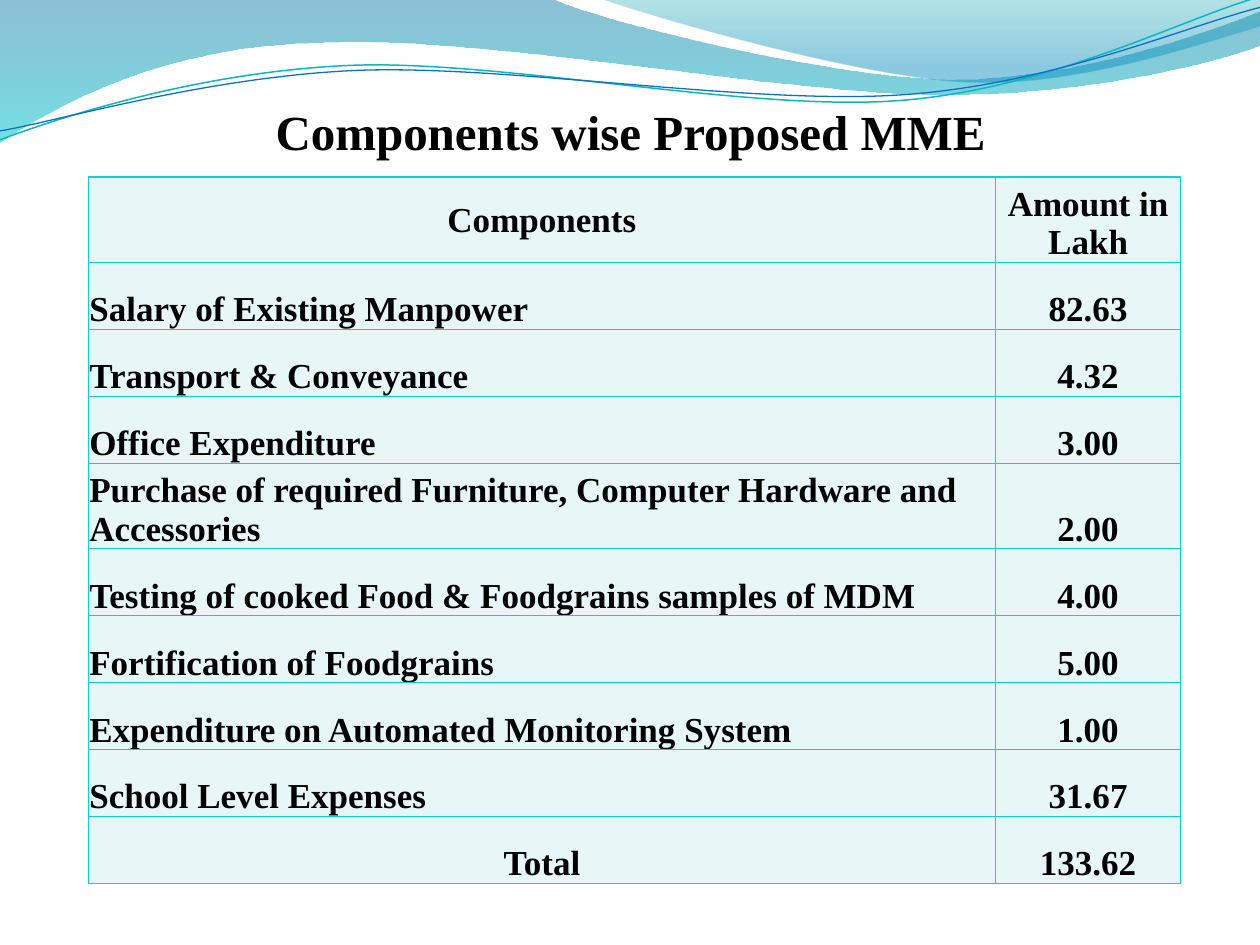
from lxml import etree
from pptx import Presentation
from pptx.dml.color import RGBColor
from pptx.enum.text import MSO_ANCHOR, PP_ALIGN
from pptx.oxml.ns import qn
from pptx.util import Cm, Pt

CENTER, LEFT = PP_ALIGN.CENTER, PP_ALIGN.LEFT
MIDDLE, BOTTOM = MSO_ANCHOR.MIDDLE, MSO_ANCHOR.BOTTOM

BLACK = RGBColor(0x00, 0x00, 0x00)
CELL_FILL = RGBColor(0xE7, 0xF7, 0xF8)
BORDER = RGBColor(0x0B, 0xD0, 0xD9)
DEEP_BLUE = RGBColor(0x00, 0x74, 0xA1)
AQUA = RGBColor(0x00, 0xC6, 0xCF)
TEAL = RGBColor(0x00, 0xA1, 0xA9)
SKY = RGBColor(0x00, 0x8B, 0xBF)
TEAL_LINE = RGBColor(0x0A, 0xB8, 0xBF)
BLUE_LINE = RGBColor(0x0F, 0x6F, 0xC6)

FONT = "Times New Roman"

# Outlines in cm: one point is a straight step, three points are a Bézier curve.
WIDE_WAVE = [
    [(0, 0)], [(11.18, 0)],
    [(12.09, 0.43), (16.87, 1.6), (19.25, 1.6)],
    [(21.67, 1.6), (24.33, 0.66), (25.4, 0.23)],
    [(25.4, 0.91)],
    [(24.97, 1.12), (22.1, 1.93), (18.95, 1.91)],
    [(15.8, 1.91), (9.7, 0.71), (6.53, 0.86)],
    [(3.28, 0.91), (1.17, 2.11), (0, 2.87)],
]
RIGHT_WAVE = [
    [(12.17, 0)],
    [(12.93, 0.28), (17.32, 1.57), (19.53, 1.65)],
    [(21.74, 1.75), (24.41, 0.81), (25.4, 0.53)],
    [(25.4, 0)],
]
TEAL_CURVE = [
    [(0, 2.82)],
    [(1.22, 2.36), (4.01, 1.45), (7.04, 1.32)],
    [(10.03, 1.19), (15.06, 2.26), (18.11, 2.03)],
    [(21.16, 1.8), (23.83, 0.38), (25.35, -0.05)],
]
BLUE_CURVE = [
    [(0, 2.64)],
    [(1.19, 2.44), (4.17, 1.55), (7.19, 1.42)],
    [(10.24, 1.3), (15.16, 2.13), (18.21, 1.91)],
    [(21.23, 1.7), (23.9, 0.53), (25.4, 0.15)],
]

HEADER = ("Components", "Amount in Lakh")
COMPONENTS = [
    ("Salary of Existing Manpower", "82.63"),
    ("Transport & Conveyance", "4.32"),
    ("Office Expenditure", "3.00"),
    ("Purchase of required Furniture, Computer Hardware and Accessories", "2.00"),
    ("Testing of cooked Food & Foodgrains samples of MDM", "4.00"),
    ("Fortification of Foodgrains", "5.00"),
    ("Expenditure on Automated Monitoring System", "1.00"),
    ("School Level Expenses", "31.67"),
]
TOTAL = ("Total", "133.62")
TWO_LINE_ROWS = (0, 4)


def set_attributes(target, values):
    for name, value in values.items():
        setattr(target, name, value)


def add_outline(slide, segments, closed):
    """Build straight steps between the end points, then bend the curved ones."""
    ends = [(Cm(x), Cm(y)) for x, y in (segment[-1] for segment in segments)]
    builder = slide.shapes.build_freeform(*ends[0])
    builder.add_line_segments(ends[1:], close=closed)
    shape = builder.convert_to_shape()
    shape.shadow.inherit = False
    steps = list(shape.element.iter(qn("a:lnTo")))
    for step, segment in zip(steps, segments[1:]):
        if len(segment) == 3:
            curve = etree.Element(qn("a:cubicBezTo"))
            for x, y in segment:
                etree.SubElement(curve, qn("a:pt"), x=str(Cm(x) - shape.left),
                                 y=str(Cm(y) - shape.top))
            step.getparent().replace(step, curve)
    return shape


def add_wave(slide, segments, stops):
    """Fill an outline from top to bottom; stops are (position, colour, opacity %)."""
    shape = add_outline(slide, segments, closed=True)
    shape.line.fill.background()
    shape.fill.gradient()
    shape.fill.gradient_angle = 270
    for stop, (position, color, _) in zip(shape.fill.gradient_stops, stops):
        stop.position = position
        stop.color.rgb = color
    colors = shape.element.spPr.iter(qn("a:srgbClr"))
    for color_element, (_, _, opacity) in zip(colors, stops):
        etree.SubElement(color_element, qn("a:alpha"), val=str(opacity * 1000))


def add_curve(slide, segments, color, width):
    shape = add_outline(slide, segments, closed=False)
    shape.fill.background()
    shape.line.color.rgb = color
    shape.line.width = Pt(width)


def write_text(frame, text, size, alignment):
    frame.text = text
    paragraph = frame.paragraphs[0]
    paragraph.alignment = alignment
    set_attributes(paragraph.runs[0].font, {"name": FONT, "size": Pt(size), "bold": True})
    paragraph.runs[0].font.color.rgb = BLACK


def place_title(slide, text):
    title = slide.shapes.title
    set_attributes(title, {"left": Cm(4.67), "top": Cm(1.91),
                           "width": Cm(16.08), "height": Cm(1.45)})
    write_text(title.text_frame, text, 28, CENTER)
    title.text_frame.vertical_anchor = MIDDLE
    title.element.getparent().append(title.element)  # in front of the waves


def add_borders(cell):
    properties = cell._tc.get_or_add_tcPr()
    for side in ("a:lnL", "a:lnR", "a:lnT", "a:lnB"):
        line = etree.SubElement(properties, qn(side), w=str(Pt(1)))
        fill = etree.SubElement(line, qn("a:solidFill"))
        etree.SubElement(fill, qn("a:srgbClr"), val=str(BORDER))


def format_cell(cell, text, alignment, anchor):
    write_text(cell.text_frame, text, 20, alignment)
    set_attributes(cell, {"vertical_anchor": anchor, "margin_left": Cm(0.02),
                          "margin_right": Cm(0.02), "margin_top": Cm(0.02),
                          "margin_bottom": 0})
    add_borders(cell)
    cell.fill.solid()
    cell.fill.fore_color.rgb = CELL_FILL


def add_component_table(slide):
    rows = [HEADER, *COMPONENTS, TOTAL]
    frame = slide.shapes.add_table(len(rows), 2, Cm(1.78), Cm(3.57), Cm(22.02), Cm(14.24))
    table = frame.table
    table.columns[0].width = Cm(18.29)
    table.columns[1].width = Cm(3.73)
    for row_index, (name, amount) in enumerate(rows):
        table.rows[row_index].height = Cm(1.72 if row_index in TWO_LINE_ROWS else 1.35)
        name_alignment = LEFT if 0 < row_index < len(rows) - 1 else CENTER
        name_anchor = BOTTOM if row_index else MIDDLE
        format_cell(table.cell(row_index, 0), name, name_alignment, name_anchor)
        format_cell(table.cell(row_index, 1), amount, CENTER, BOTTOM)


def main():
    presentation = Presentation()
    presentation.slide_width, presentation.slide_height = Cm(25.4), Cm(19.05)
    slide = presentation.slides.add_slide(presentation.slide_layouts.get_by_name("Title Only"))
    add_wave(slide, WIDE_WAVE, [(0, DEEP_BLUE, 45), (1, AQUA, 55)])
    add_wave(slide, RIGHT_WAVE, [(0, TEAL, 30), (0.8, SKY, 45)])
    add_curve(slide, TEAL_CURVE, TEAL_LINE, 0.85)
    add_curve(slide, BLUE_CURVE, BLUE_LINE, 0.75)
    place_title(slide, "Components wise Proposed MME")
    add_component_table(slide)
    presentation.save("out.pptx")


if __name__ == "__main__":
    main()
